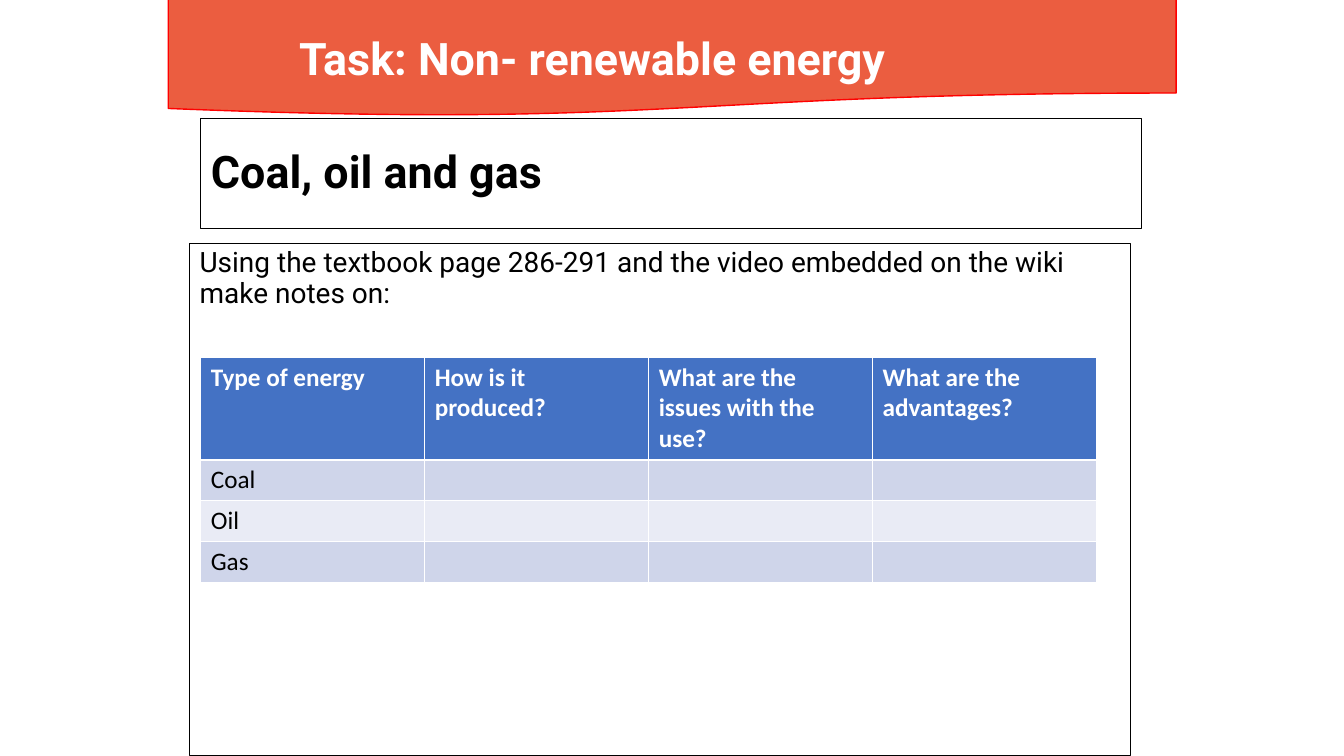
import pptx
import pptx.dml.color
import pptx.enum.shapes
import pptx.enum.text
import pptx.oxml.ns
import lxml.etree
from pptx.util import Cm, Pt

BANNER = "Task: Non- renewable energy"
TITLE = "Coal, oil and gas"
INSTRUCTION = ("Using the textbook page 286-291 and the video embedded "
               "on the wiki make notes on:")
HEADINGS = ["Type of energy", "How is it produced?",
            "What are the issues with the use?", "What are the advantages?"]
ENERGY_TYPES = ["Coal", "Oil", "Gas"]

COLOURS = {"white": "FFFFFF", "black": "000000", "banner": "EB5D40",
           "red": "FF0000", "header": "4472C4",
           "odd": "CFD5EA", "even": "E9EBF5"}

# left, top, width, height in centimetres
PLACES = {"banner": (4.24, -0.02, 25.4, 2.95),
          "banner text": (7.29, 0.64, 17.37, 1.62),
          "title": (5.06, 2.98, 23.72, 2.79),
          "instruction": (4.78, 6.14, 23.72, 12.9),
          "table": (5.06, 9, 22.58, 5.68)}
HEADER_HEIGHT, ROW_HEIGHT = 2.59, 1.03


def colour(name):
    return pptx.dml.color.RGBColor.from_string(COLOURS[name])


def place(name):
    return [Cm(length) for length in PLACES[name]]


def paint(target, fill, line=None, width=0.75):
    target.fill.solid()
    target.fill.fore_color.rgb = colour(fill)
    if line:
        target.line.color.rgb = colour(line)
        target.line.width = Pt(width)


def write(frame, text, font, ink, para_format=None):
    para = frame.paragraphs[0]
    para.alignment = pptx.enum.text.PP_ALIGN.LEFT
    for name, value in (para_format or {}).items():
        setattr(para, name, value)
    span = para.add_run()
    span.text = text
    for name, value in font.items():
        setattr(span.font, name, value)
    span.font.color.rgb = colour(ink)


HEADLINE = {"name": "Roboto", "size": Pt(32), "bold": True}
BODY = {"name": "Roboto", "size": Pt(20)}
CELL = {"name": "Calibri", "size": Pt(18)}

deck = pptx.Presentation()
deck.slide_width, deck.slide_height = Cm(33.87), Cm(19.05)
page = deck.slides.add_slide(deck.slide_layouts[5])
shapes = page.shapes
preset = pptx.enum.shapes.MSO_SHAPE

banner = shapes.add_shape(preset.FLOWCHART_DOCUMENT, *place("banner"))
banner.shadow.inherit = False
paint(banner, "banner", "red", 1)

banner_box = shapes.add_textbox(*place("banner text"))
banner_box.text_frame.word_wrap = True
write(banner_box.text_frame, BANNER, HEADLINE, "white")

title = shapes.title
title.left, title.top, title.width, title.height = place("title")
paint(title, "white", "black")
title.text_frame.auto_size = pptx.enum.text.MSO_AUTO_SIZE.NONE
title.text_frame.vertical_anchor = pptx.enum.text.MSO_ANCHOR.MIDDLE
write(title.text_frame, TITLE, HEADLINE, "black", {"line_spacing": 0.9})

panel = shapes.add_shape(preset.RECTANGLE, *place("instruction"))
panel.shadow.inherit = False
paint(panel, "white", "black")
fill_colour = panel.fill._xPr.find(".//" + pptx.oxml.ns.qn("a:srgbClr"))
lxml.etree.SubElement(fill_colour, pptx.oxml.ns.qn("a:alpha"), val="88000")
panel.text_frame.word_wrap = True
panel.text_frame.vertical_anchor = pptx.enum.text.MSO_ANCHOR.TOP
write(panel.text_frame, INSTRUCTION, BODY, "black",
      {"line_spacing": 0.9, "space_before": Pt(10)})

table = shapes.add_table(len(ENERGY_TYPES) + 1, len(HEADINGS),
                         *place("table")).table
for number, row in enumerate(table.rows):
    is_header = number == 0
    row.height = Cm(HEADER_HEIGHT if is_header else ROW_HEIGHT)
    fill = "header" if is_header else "odd" if number % 2 else "even"
    texts = HEADINGS if is_header else [ENERGY_TYPES[number - 1]]
    for cell in row.cells:
        paint(cell, fill)
    for cell, text in zip(row.cells, texts):
        write(cell.text_frame, text, {**CELL, "bold": is_header},
              "white" if is_header else "black")

deck.save("out.pptx")
